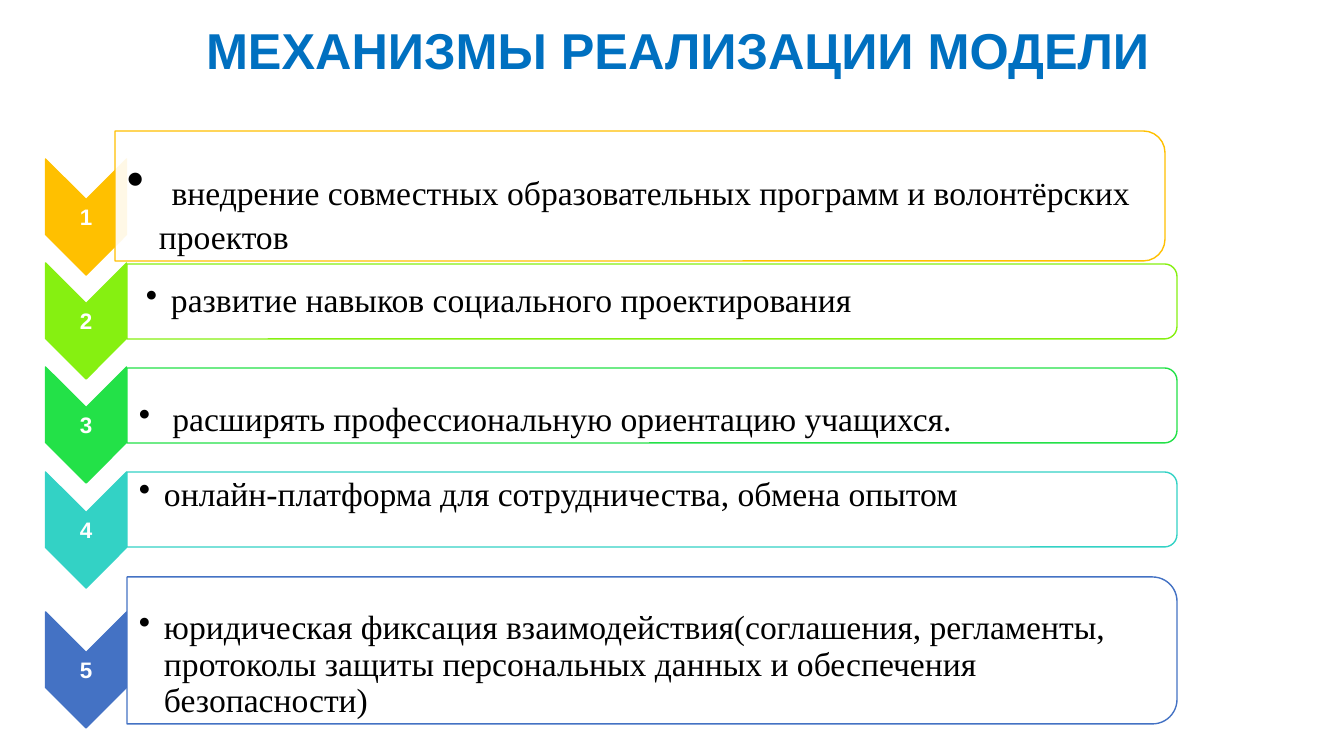
from lxml import etree
from pptx import Presentation
from pptx import util as u
from pptx.dml.color import RGBColor
from pptx.enum import shapes, text
from pptx.oxml.ns import qn

COLORS = {
    "title": "0070C0", "white": "FFFFFF", "black": "000000",
    "amber": "FFC000", "lime": "86F011", "green": "23E148",
    "teal": "33D2C5", "blue": "4472C4",
}
CHEVRON_LENGTH, CHEVRON_WIDTH, CHEVRON_CENTER = 116, 81, 86
PANEL_WIDTH = 1050


def px(length):
    return u.Emu(round(length * 914400 / 100.8))


def add_text(left, top, width, height, wording, font_name, size, color, bold=False):
    box = page.shapes.add_textbox(px(left), px(top), px(width), px(height))
    frame = box.text_frame
    frame.word_wrap = True
    frame.margin_left = frame.margin_right = frame.margin_top = frame.margin_bottom = 0
    frame.text = wording
    for span in frame.paragraphs[0].runs:
        span.font.name = font_name
        span.font.size = u.Pt(size)
        span.font.bold = bold
        span.font.color.rgb = RGBColor.from_string(COLORS[color])
    return frame


deck = Presentation()
deck.slide_width, deck.slide_height = px(1344), px(756)
page = deck.slides.add_slide(deck.slide_layouts[6])

title = add_text(206, 13, 1014, 72, "МЕХАНИЗМЫ РЕАЛИЗАЦИИ МОДЕЛИ", "Arial", 36, "title", True)
title.vertical_anchor = text.MSO_ANCHOR.MIDDLE

# color, chevron center, panel left, top, height, text inset, text top, indent, line pitch, wording
mechanisms = [
    ("amber", 217, 115, 131, 130, 12, 176, 32, 28.5,
     "внедрение совместных образовательных программ и волонтёрских проектов"),
    ("lime", 321, 127, 264, 75, 19, 283, 25, 26,
     "развитие навыков социального проектирования"),
    ("green", 425, 127, 368, 75, 12, 402, 25, 26,
     " расширять профессиональную ориентацию учащихся."),
    ("teal", 530, 127, 472, 75, 12, 477, 25, 26,
     "онлайн-платформа для сотрудничества, обмена опытом"),
    ("blue", 670, 127, 577, 147, 12, 610, 25, 26,
     "юридическая фиксация взаимодействия(соглашения, регламенты, "
     "протоколы защиты персональных данных и обеспечения безопасности)"),
]

for number, mechanism in enumerate(mechanisms, 1):
    color, center, left, top, height, inset, text_top, indent, pitch, wording = mechanism
    outlines = [
        (shapes.MSO_SHAPE.CHEVRON, CHEVRON_CENTER, center, CHEVRON_LENGTH, CHEVRON_WIDTH, color),
        (shapes.MSO_SHAPE.ROUND_2_SAME_RECTANGLE, left + PANEL_WIDTH / 2, top + height / 2,
         height, PANEL_WIDTH, "white"),
    ]
    for kind, middle_x, middle_y, across, along, fill in outlines:
        shape = page.shapes.add_shape(kind, px(middle_x - across / 2), px(middle_y - along / 2),
                                      px(across), px(along))
        shape.rotation = 90
        shape.shadow.inherit = False
        shape.fill.solid()
        shape.fill.fore_color.rgb = RGBColor.from_string(COLORS[fill])
        shape.line.color.rgb = RGBColor.from_string(COLORS[color])
        shape.line.width = u.Pt(1)
    panel_fill = shape.fill._xPr.find(qn("a:solidFill"))[0]
    etree.SubElement(panel_fill, qn("a:alpha"), val="90000")

    label = add_text(CHEVRON_CENTER - 40, center - 17, 80, 34, str(number), "Arial", 16, "white", True)
    label.vertical_anchor = text.MSO_ANCHOR.MIDDLE
    label.paragraphs[0].alignment = text.PP_ALIGN.CENTER

    frame = add_text(left + inset, text_top, PANEL_WIDTH - inset - 8, top + height - text_top,
                     wording, "Times New Roman", 24, "black")
    para = frame.paragraphs[0]
    properties = para._p.get_or_add_pPr()
    properties.set("marL", str(px(indent)))
    properties.set("indent", str(-px(indent)))
    etree.SubElement(properties, qn("a:buChar"), char="•")
    para.line_spacing = u.Pt(pitch)
    if number == 1:
        span = para.add_run()
        span.text = " "
        span.font.name = "Times New Roman"
        span.font.size = u.Pt(36)
        para.runs[0]._r.addprevious(span._r)

deck.save("out.pptx")
